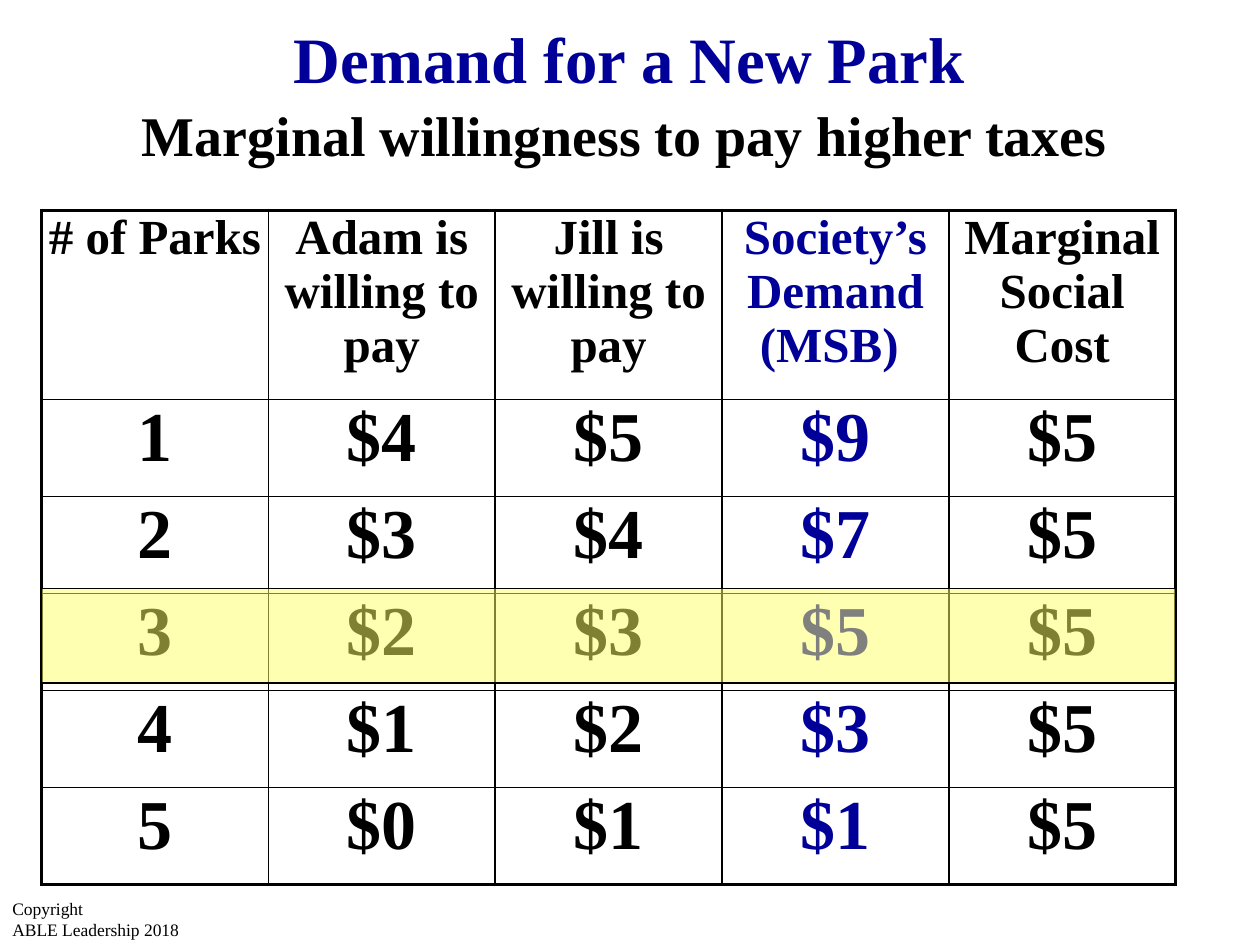
from lxml.etree import SubElement
from pptx import Presentation
from pptx.dml.color import RGBColor
from pptx.enum.shapes import MSO_SHAPE as Shape
from pptx.enum.text import PP_ALIGN as Align
from pptx.oxml.ns import qn
from pptx.util import Inches, Pt

BLACK = RGBColor(0, 0, 0)
NAVY = RGBColor(0, 0, 0x99)
YELLOW = RGBColor(0xFF, 0xFF, 0x66)
FONT = "Times New Roman"

HEADINGS = ["# of Parks", "Adam is willing to pay", "Jill is willing to pay",
            "Society’s Demand (MSB) ", "Marginal Social Cost"]
# Parks, then Adam's, Jill's, society's demand and marginal social cost in dollars
DEMAND = [(1, 4, 5, 9, 5), (2, 3, 4, 7, 5), (3, 2, 3, 5, 5),
          (4, 1, 2, 3, 5), (5, 0, 1, 1, 5)]
SOCIETY_COLUMN = 3
LEFT, TABLE_TOP, TABLE_WIDTH = 0.33, 1.67, 9
HEADING_HEIGHT, ROW_HEIGHT = 1.5, 0.77
THIN, THICK = Pt(1), Pt(2.25)


def add_run(paragraph, text, size, color, bold=True, align=Align.CENTER):
    paragraph.alignment = align
    run = paragraph.add_run()
    run.text = text
    run.font.name = FONT
    run.font.size = Pt(size)
    run.font.bold = bold
    run.font.color.rgb = color


def add_text(slide, box, lines, size, color, **style):
    frame = slide.shapes.add_textbox(*map(Inches, box)).text_frame
    frame.word_wrap = True
    for index, line in enumerate(lines):
        paragraph = frame.add_paragraph() if index else frame.paragraphs[0]
        add_run(paragraph, line, size, color, **style)


def set_borders(cell, widths):
    """Draw black borders; widths are in the order left, right, top, bottom."""
    properties = cell._tc.get_or_add_tcPr()
    for side, width in zip("LRTB", widths):
        line = SubElement(properties, qn(f"a:ln{side}"), w=str(width))
        fill = SubElement(line, qn("a:solidFill"))
        SubElement(fill, qn("a:srgbClr"), val=str(BLACK))


def add_demand_table(slide):
    rows = [HEADINGS] + [[str(parks)] + [f"${value}" for value in values]
                         for parks, *values in DEMAND]
    last_row, last_column = len(rows) - 1, len(HEADINGS) - 1
    height = HEADING_HEIGHT + ROW_HEIGHT * last_row
    table = slide.shapes.add_table(
        len(rows), len(HEADINGS), Inches(LEFT), Inches(TABLE_TOP),
        Inches(TABLE_WIDTH), Inches(height)).table
    table.first_row = table.horz_banding = False
    for r, texts in enumerate(rows):
        table.rows[r].height = Inches(ROW_HEIGHT if r else HEADING_HEIGHT)
        for c, text in enumerate(texts):
            cell = table.cell(r, c)
            cell.margin_left = cell.margin_right = 0
            cell.margin_top = cell.margin_bottom = 0
            outer_edges = (c == 0, c == last_column, r == 0, r == last_row)
            set_borders(cell, [THICK if edge else THIN for edge in outer_edges])
            cell.fill.background()
            add_run(cell.text_frame.paragraphs[0], text, 40 if r else 28,
                    NAVY if c == SOCIETY_COLUMN else BLACK)


def add_highlight(slide, box):
    """Add a half-transparent band over the optimal quantity."""
    band = slide.shapes.add_shape(Shape.RECTANGLE, *map(Inches, box))
    band.shadow.inherit = False
    band.fill.solid()
    band.fill.fore_color.rgb = YELLOW
    color = band.fill._xPr.find(qn("a:solidFill"))[0]
    SubElement(color, qn("a:alpha"), val="50000")
    band.line.color.rgb = BLACK
    band.line.width = Pt(0.75)


def main():
    deck = Presentation()
    deck.slide_width, deck.slide_height = Inches(10), Inches(7.5)
    slide = deck.slides.add_slide(deck.slide_layouts[6])

    add_demand_table(slide)
    add_highlight(slide, (LEFT, 4.67, TABLE_WIDTH, 0.75))
    add_text(slide, (0.33, 0.1, 9.33, 0.71), ["Demand for a New Park"], 37, NAVY)
    add_text(slide, (0.17, 0.75, 9.58, 0.63),
             ["Marginal willingness to pay higher taxes"], 32, BLACK)
    add_text(slide, (0, 7.08, 1.67, 0.5), ["Copyright", "ABLE Leadership 2018"],
             10, BLACK, bold=False, align=Align.LEFT)
    deck.save("out.pptx")


if __name__ == "__main__":
    main()
